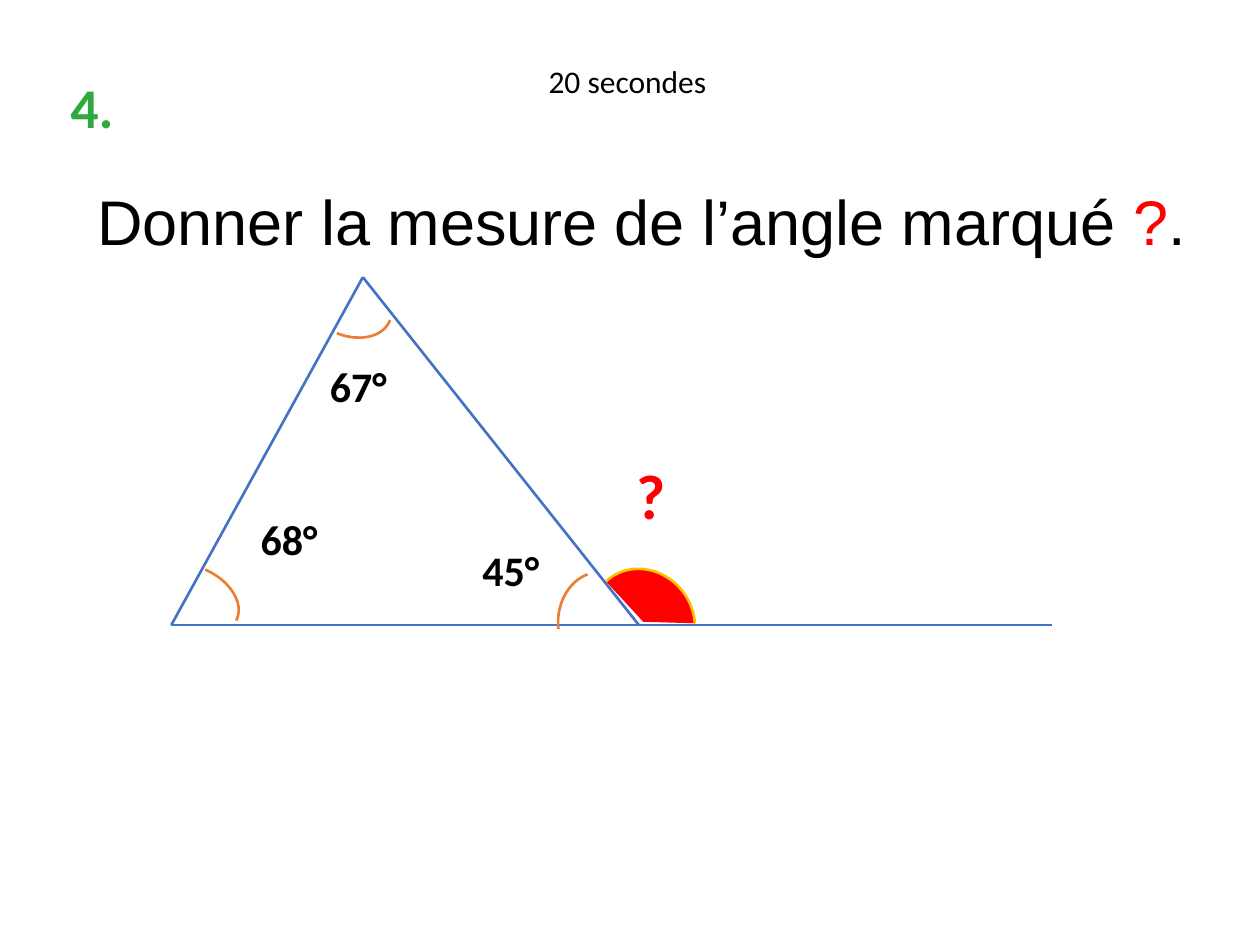
"""Build a quiz slide asking for the exterior angle of a triangle."""
import pptx
import pptx.dml.color
import pptx.enum.shapes
import pptx.enum.text
import pptx.oxml
import pptx.util

BLACK, RED, GREEN = "000000", "FF0000", "31A93F"
BLUE, ORANGE, GOLD = "4472C4", "ED7D31", "FFC000"
STROKE = 1.5

QUESTION = [("Donner la mesure de l’angle marqué ", BLACK), ("?", RED), (".", BLACK)]
QUESTION_BOX = (0.67, 1.4, 8.93, 0.68)

# text, box, size, colour, bold, alignment
HEADINGS = [
    ("4.", (0.46, 0.53, 0.79, 0.65), 32, GREEN, True, "LEFT"),
    ("20 secondes", (3.5, 0.44, 2.96, 0.41), 18, BLACK, False, "CENTER"),
]
ANGLE_LABELS = [
    ("45°", (3.73, 4.27, 1.13, 0.69), 24, BLACK, True, "LEFT"),
    ("67°", (2.52, 2.81, 1.08, 0.69), 24, BLACK, True, "LEFT"),
    ("?", (4.95, 3.57, 0.91, 0.71), 36, RED, True, "LEFT"),
    ("68°", (1.97, 4.03, 0.95, 0.69), 24, BLACK, True, "LEFT"),
]

BASE_LEFT, APEX, BASE_RIGHT, BASE_END = (1.36, 4.96), (2.88, 2.2), (5.07, 4.96), (8.35, 4.96)
SIDES = [(BASE_LEFT, BASE_END), (APEX, BASE_RIGHT), (BASE_LEFT, APEX)]

# box, rotation, start and end adjustments, line, fill
ANGLE_ARCS = [
    ((4.43, 4.54, 0.67, 0.8), 0, (102.55, 153.11), ORANGE, None),
    ((2.49, 2.02, 0.52, 0.75), 115.8, (160.23, 210.76), ORANGE, None),
    ((4.71, 4.5, 0.79, 0.87), 321.6, (159.44, 24.09), GOLD, RED),
    ((1.29, 4.38, 0.5, 0.75), 115.8, (104.88, 162.62), ORANGE, None),
]


def inches(lengths):
    return [pptx.util.Inches(length) for length in lengths]


def rgb(colour):
    return pptx.dml.color.RGBColor.from_string(colour)


def draw_stroke(line, colour):
    line.color.rgb = rgb(colour)
    line.width = pptx.util.Pt(STROKE)


def add_label(shapes, text, box, size, colour, bold, alignment):
    frame = shapes.add_textbox(*inches(box)).text_frame
    frame.word_wrap = True
    paragraph = frame.paragraphs[0]
    paragraph.text = text
    paragraph.alignment = pptx.enum.text.PP_ALIGN[alignment]
    font = paragraph.font
    font.name, font.size, font.bold = "Calibri", pptx.util.Pt(size), bold
    font.color.rgb = rgb(colour)


def add_side(shapes, start, end):
    side = shapes.add_connector(
        pptx.enum.shapes.MSO_CONNECTOR.STRAIGHT, *inches(start + end))
    draw_stroke(side.line, BLUE)
    side._element.spPr.append(pptx.oxml.parse_xml(
        '<a:effectLst xmlns:a="http://schemas.openxmlformats.org/drawingml/2006/main"/>'))


def add_arc(shapes, box, rotation, sweep, line, fill):
    arc = shapes.add_shape(pptx.enum.shapes.MSO_SHAPE.ARC, *inches(box))
    arc.adjustments[0], arc.adjustments[1] = sweep
    arc.rotation = rotation
    arc.shadow.inherit = False
    draw_stroke(arc.line, line)
    if fill:
        arc.fill.solid()
        arc.fill.fore_color.rgb = rgb(fill)
    else:
        arc.fill.background()


def write_question(title):
    title.left, title.top, title.width, title.height = inches(QUESTION_BOX)
    frame = title.text_frame
    frame.word_wrap = False
    frame.auto_size = pptx.enum.text.MSO_AUTO_SIZE.NONE
    frame.vertical_anchor = pptx.enum.text.MSO_ANCHOR.TOP
    paragraph = frame.paragraphs[0]
    paragraph.alignment = pptx.enum.text.PP_ALIGN.LEFT
    paragraph.font.name, paragraph.font.size = "Arial", pptx.util.Pt(36)
    for text, colour in QUESTION:
        run = paragraph.add_run()
        run.text = text
        run.font.color.rgb = rgb(colour)


def main():
    deck = pptx.Presentation()
    deck.slide_width, deck.slide_height = inches((10, 7.5))
    slide = deck.slides.add_slide(deck.slide_layouts[5])
    write_question(slide.shapes.title)
    for heading in HEADINGS:
        add_label(slide.shapes, *heading)
    figure = slide.shapes.add_group_shape().shapes
    for side in SIDES:
        add_side(figure, *side)
    for arc in ANGLE_ARCS:
        add_arc(figure, *arc)
    for label in ANGLE_LABELS:
        add_label(figure, *label)
    deck.save("out.pptx")


if __name__ == "__main__":
    main()
